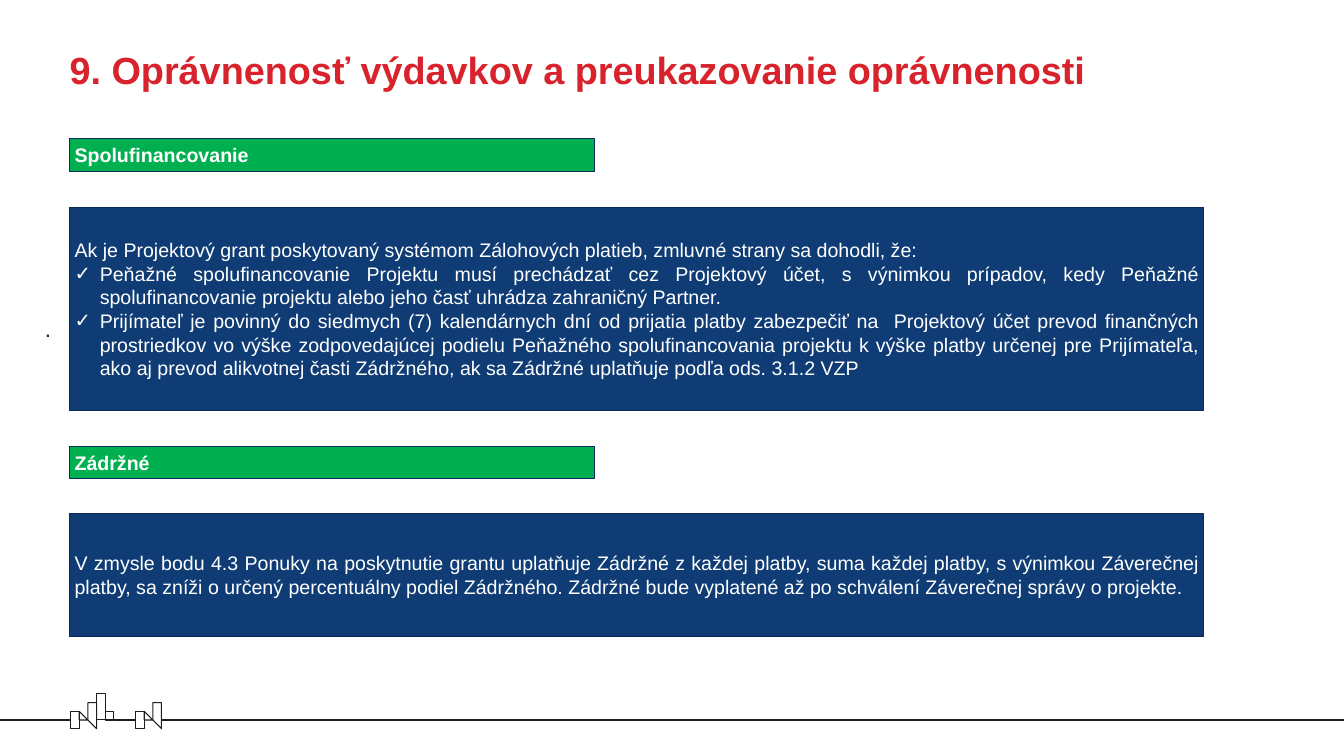
from lxml.etree import SubElement
from pptx import Presentation
from pptx.dml.color import RGBColor
from pptx.enum.shapes import MSO_CONNECTOR as Connector, MSO_SHAPE as Shape
from pptx.enum.text import MSO_ANCHOR as Anchor, MSO_AUTO_SIZE as AutoSize, PP_ALIGN as Align
from pptx.oxml.ns import qn
from pptx.util import Pt


def color(value):
    return RGBColor.from_string(value)


def format_text(paragraph, size, value, bold=False, align=Align.LEFT):
    paragraph.alignment = align
    for name, setting in {"name": "Arial", "size": Pt(size), "bold": bold}.items():
        setattr(paragraph.font, name, setting)
    paragraph.font.color.rgb = color(value)


GREEN, NAVY, EDGE, WHITE, RED, INK = "00B050", "0F3C74", "0B2C56", "FFFFFF", "D8222C", "1E1E1C"
LEFT = 99.4
HEADING = {"width": 749.5, "fill": GREEN, "bold": True}
PANEL = {"width": 1619.3, "fill": NAVY, "bold": False}

presentation = Presentation()
presentation.slide_width, presentation.slide_height = Pt(1919.52), Pt(1080)
slide = presentation.slides.add_slide(presentation.slide_layouts[5])

unit = 12.4
skyline_left, skyline_top = 100.8, 991.4
ground = skyline_top + 3 * unit
second_block = 92.6

outlines = []
buildings = [
    (skyline_left + 4 * unit, 2, 1),
    (skyline_left + 3 * unit, 0, 3),
    (skyline_left, 2, 2),
    (skyline_left + second_block, 2, 2),
]
for left, row, height in buildings:
    outlines.append(slide.shapes.add_shape(
        Shape.RECTANGLE, Pt(left), Pt(skyline_top + row * unit), Pt(unit), Pt(height * unit)))

triangle = [(2, 3), (1, 3), (1, 2)]
slanted_tower = [(2, 1), (2, 3), (3, 4), (3, 1)]
for block_left in (skyline_left, skyline_left + second_block):
    for corners in (triangle, slanted_tower):
        points = [(Pt(block_left + x * unit), Pt(skyline_top + y * unit)) for x, y in corners]
        builder = slide.shapes.build_freeform(*points[0], scale=1.0)
        builder.add_line_segments(points[1:], close=True)
        outlines.append(builder.convert_to_shape())

for shape in outlines:
    shape.shadow.inherit = False
    shape.fill.background()

ground_spans = [
    (0, skyline_left),
    (skyline_left + 5 * unit, skyline_left + second_block),
    (skyline_left + second_block + 3 * unit, 1919),
]
for start, end in ground_spans:
    line = slide.shapes.add_connector(Connector.STRAIGHT, Pt(start), Pt(ground), Pt(end), Pt(ground))
    SubElement(line._element.spPr, qn("a:effectLst"))
    outlines.append(line)

for shape in outlines:
    shape.line.color.rgb = color("1D1E1C")
    shape.line.width = Pt(1.5)

title = slide.shapes.title
title.left, title.top, title.width, title.height = Pt(LEFT), Pt(63.4), Pt(1721.5), Pt(131)
frame = title.text_frame
frame.text = "9. Oprávnenosť výdavkov a preukazovanie oprávnenosti"
frame_format = {"margin_left": 0, "margin_right": 0, "margin_top": Pt(3.6), "margin_bottom": 0,
                "vertical_anchor": Anchor.TOP, "auto_size": AutoSize.NONE, "word_wrap": True}
for name, setting in frame_format.items():
    setattr(frame, name, setting)
format_text(frame.paragraphs[0], 54, RED, bold=True)

dot = slide.shapes.add_textbox(Pt(64), Pt(450), Pt(30), Pt(40))
frame = dot.text_frame
for name, setting in {**frame_format, "margin_top": 0}.items():
    setattr(frame, name, setting)
frame.text = "."
format_text(frame.paragraphs[0], 32, INK)

boxes = [
    (HEADING, 198, 46.8, ["Spolufinancovanie"]),
    (HEADING, 637.2, 46.8, ["Zádržné"]),
    (PANEL, 733.7, 175, [
        "V zmysle bodu 4.3 Ponuky na poskytnutie grantu uplatňuje Zádržné z každej platby, "
        "suma každej platby, s výnimkou Záverečnej platby, sa zníži o určený percentuálny podiel "
        "Zádržného. Zádržné bude vyplatené až po schválení Záverečnej správy o projekte."]),
    (PANEL, 295.9, 290.9, [
        "Ak je Projektový grant poskytovaný systémom Zálohových platieb, zmluvné strany sa dohodli, že:",
        "Peňažné spolufinancovanie Projektu musí prechádzať cez Projektový účet, s výnimkou prípadov, "
        "kedy Peňažné spolufinancovanie projektu alebo jeho časť uhrádza zahraničný Partner.",
        "Prijímateľ je povinný do siedmych (7) kalendárnych dní od prijatia platby zabezpečiť na  "
        "Projektový účet prevod finančných prostriedkov vo výške zodpovedajúcej podielu Peňažného "
        "spolufinancovania projektu k výške platby určenej pre Prijímateľa, ako aj prevod alikvotnej "
        "časti Zádržného, ak sa Zádržné uplatňuje podľa ods. 3.1.2 VZP"]),
]
for style, top, height, texts in boxes:
    shape = slide.shapes.add_shape(Shape.RECTANGLE, Pt(LEFT), Pt(top), Pt(style["width"]), Pt(height))
    shape.shadow.inherit = False
    shape.fill.solid()
    shape.fill.fore_color.rgb = color(style["fill"])
    shape.line.color.rgb = color(EDGE)
    shape.line.width = Pt(1)
    frame = shape.text_frame
    frame.word_wrap = True
    frame.vertical_anchor = Anchor.MIDDLE
    for index, text in enumerate(texts):
        paragraph = frame.paragraphs[0] if index == 0 else frame.add_paragraph()
        paragraph.text = text
        if index > 0:
            properties = paragraph._p.get_or_add_pPr()
            properties.set("marL", str(Pt(36)))
            properties.set("indent", str(-Pt(36)))
            SubElement(properties, qn("a:buFont"), typeface="Arial")
            SubElement(properties, qn("a:buChar"), char="✓")
        format_text(paragraph, 28, WHITE, style["bold"], Align.JUSTIFY)

presentation.save("out.pptx")
